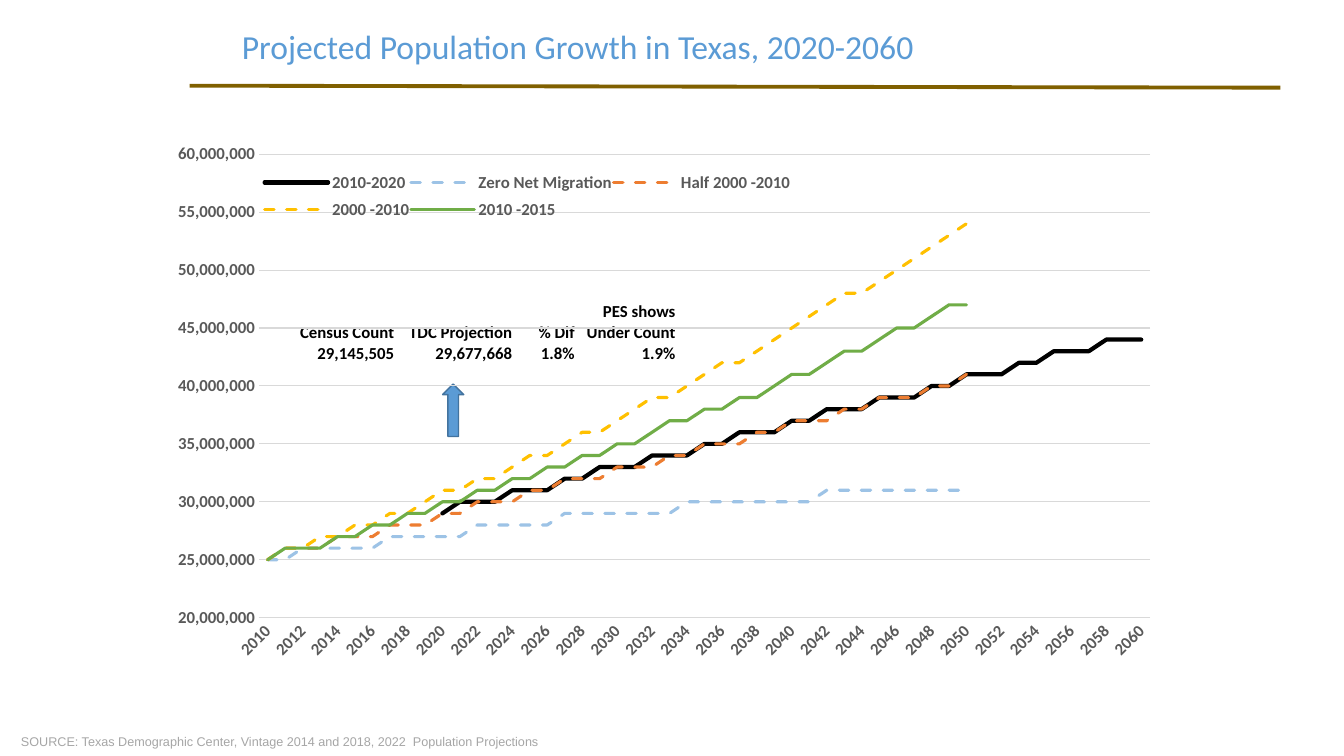
from dataclasses import dataclass
from math import prod

from lxml import etree
from pptx import Presentation
from pptx.chart.data import CategoryChartData
from pptx.dml.color import RGBColor
from pptx.enum.chart import XL_CHART_TYPE, XL_LEGEND_POSITION, XL_TICK_MARK
from pptx.enum.dml import MSO_LINE
from pptx.enum.shapes import MSO_CONNECTOR, MSO_SHAPE
from pptx.enum.text import MSO_ANCHOR, PP_ALIGN
from pptx.oxml import parse_xml
from pptx.oxml.ns import nsdecls, qn
from pptx.util import Inches, Pt

LINE = XL_CHART_TYPE.LINE
BOTTOM = XL_LEGEND_POSITION.BOTTOM
NO_TICK = XL_TICK_MARK.NONE
DASH = MSO_LINE.DASH
STRAIGHT = MSO_CONNECTOR.STRAIGHT
ARROW = MSO_SHAPE.UP_ARROW
LOW = MSO_ANCHOR.BOTTOM
RIGHT = PP_ALIGN.RIGHT


@dataclass(frozen=True)
class Theme:
    face: str = "Calibri"
    note_face: str = "Arial"
    title: int = 24
    body: int = 12
    note: int = 9
    blue: str = "5B9BD5"
    edge: str = "43739E"
    rule: str = "806000"
    pale: str = "A6A6A6"
    label: str = "595959"
    grid: str = "D9D9D9"
    ink: str = "000000"


@dataclass(frozen=True)
class Trend:
    name: str
    color: str
    start: int
    marks: tuple[float, ...]  # millions of people, one per decade
    width: float = 2.25
    dashed: bool = False


THEME = Theme()
YEARS = range(2010, 2061)
TRENDS = (
    Trend("2010-2020", "000000", 2020, (29.15, 32.95, 36.75, 40.6, 44.4), 3),
    Trend("Zero Net Migration", "9DC3E6", 2010, (25.15, 27.2, 29, 30.3, 31.2), dashed=True),
    Trend("Half 2000 -2010", "ED7D31", 2010, (25.15, 28.85, 32.7, 36.6, 40.6), dashed=True),
    Trend("2000 -2010", "FFC000", 2010, (25.15, 30.6, 37.2, 44.9, 54.4), dashed=True),
    Trend("2010 -2015", "70AD47", 2010, (25.15, 29.65, 34.85, 40.7, 47.4)),
)
COUNTS = (
    ("Census Count", "TDC Projection", "% Dif", "PES shows\vUnder Count"),
    ("29,145,505", "29,677,668", "1.8%", "1.9%"),
)


def rgb(code: str) -> RGBColor:
    return RGBColor.from_string(code)


def style(font, size: int, color: str, bold: bool = False, face: str = THEME.face) -> None:
    font.size, font.bold, font.name = Pt(size), bold, face
    font.color.rgb = rgb(color)


def stroke(line, color: str, width: float) -> None:
    line.color.rgb = rgb(color)
    line.width = Pt(width)


def people(trend: Trend, year: int) -> int | None:
    """Fit a smooth curve through the decade marks, to the nearest million."""
    t = (year - trend.start) / 10
    spots = range(len(trend.marks))
    if not 0 <= t <= spots[-1]:
        return None
    total = sum(m * prod((t - j) / (i - j) for j in spots if j != i)
                for i, m in enumerate(trend.marks))
    return round(total) * 1_000_000


def add_text(slide, box: tuple[float, ...], text: str):
    frame = slide.shapes.add_textbox(*map(Inches, box)).text_frame
    frame.word_wrap = True
    frame.text = text
    return frame.paragraphs[0]


def add_rule(slide) -> None:
    ends = map(Inches, (1.88, 0.85, 12.7, 0.87))
    rule = slide.shapes.add_connector(STRAIGHT, *ends)
    stroke(rule.line, THEME.rule, 2.75)
    etree.SubElement(rule.element.spPr, qn("a:effectLst"))


def add_counts(slide) -> None:
    box = map(Inches, (2.75, 2.94, 3.95, 0.67))
    frame = slide.shapes.add_table(2, 4, *box)
    table = frame.table
    table.first_row = table.horz_banding = False
    for col, width in zip(table.columns, (1.17, 1.17, 0.62, 1)):
        col.width = Inches(width)
    for row, height, texts in zip(table.rows, (0.46, 0.2), COUNTS):
        row.height = Inches(height)
        for cell, text in zip(row.cells, texts):
            cell.fill.background()
            cell.vertical_anchor = LOW
            cell.margin_left = cell.margin_right = cell.margin_top = Inches(0.01)
            cell.margin_bottom = 0
            cell.text_frame.text = text
            para = cell.text_frame.paragraphs[0]
            para.alignment = RIGHT
            for run in para.runs:
                style(run.font, THEME.body, THEME.ink, True)
    for props in frame.element.xpath(".//a:tcPr"):
        for spot, side in enumerate("LRTB"):
            props.insert(spot, parse_xml(
                f'<a:ln{side} {nsdecls("a")} w="12700"><a:solidFill>'
                f'<a:srgbClr val="FFFFFF"/></a:solidFill></a:ln{side}>'))


def add_arrow(slide) -> None:
    box = map(Inches, (4.39, 3.81, 0.21, 0.52))
    arrow = slide.shapes.add_shape(ARROW, *box)
    arrow.shadow.inherit = False
    arrow.fill.solid()
    arrow.fill.fore_color.rgb = rgb(THEME.blue)
    stroke(arrow.line, THEME.edge, 1)


def layout(box: tuple[float, ...], inner: bool = False):
    """Place a chart part by fractions of the chart's width and height."""
    target = '<c:layoutTarget val="inner"/>' if inner else ""
    modes = "".join(f'<c:{k}Mode val="edge"/>' for k in "xy")
    sizes = "".join(f'<c:{k} val="{v}"/>' for k, v in zip("xywh", box))
    return parse_xml(f'<c:layout {nsdecls("c")}><c:manualLayout>{target}{modes}{sizes}'
                     '</c:manualLayout></c:layout>')


def set_axes(chart) -> None:
    years, count = chart.category_axis, chart.value_axis
    for axis in (years, count):
        axis.major_tick_mark = axis.minor_tick_mark = NO_TICK
        style(axis.tick_labels.font, THEME.body, THEME.label, True)
    stroke(years.format.line, THEME.grid, 0.75)
    count.format.line.fill.background()
    count.minimum_scale, count.maximum_scale = 20_000_000, 60_000_000
    count.major_unit = 5_000_000
    count.tick_labels.number_format = "#,##0"
    count.tick_labels.number_format_is_linked = False
    stroke(count.major_gridlines.format.line, THEME.grid, 0.75)
    chart.element.xpath(".//c:catAx/c:txPr/a:bodyPr")[0].set("rot", "-2700000")
    skip = parse_xml(f'<c:tickLblSkip {nsdecls("c")} val="2"/>')
    chart.element.xpath(".//c:catAx/c:noMultiLvlLbl")[0].addprevious(skip)


def set_legend(chart) -> None:
    chart.has_legend = True
    legend = chart.legend
    legend.position = BOTTOM
    legend.include_in_layout = False
    style(legend.font, THEME.body, THEME.label, True)
    for old in chart.element.xpath(".//c:legend/c:layout"):
        old.getparent().remove(old)
    chart.element.xpath(".//c:legend/c:legendPos")[0].addnext(layout((0.09, 0.1, 0.52, 0.1)))


def add_chart(slide) -> None:
    data = CategoryChartData(number_format="#,##0")
    data.categories = [str(year) for year in YEARS]
    for trend in TRENDS:
        data.add_series(trend.name, [people(trend, year) for year in YEARS])
    box = map(Inches, (1.7, 1.03, 10.09, 6.1))
    chart = slide.shapes.add_chart(LINE, *box, data).chart
    chart.has_title = False
    style(chart.font, THEME.body, THEME.ink, True)
    chart.plots[0].vary_by_categories = False
    for series, trend in zip(chart.plots[0].series, TRENDS):
        series.smooth = False
        stroke(series.format.line, trend.color, trend.width)
        if trend.dashed:
            series.format.line.dash_style = DASH
    for line in chart.element.xpath(".//c:ser/c:spPr/a:ln"):
        line.set("cap", "rnd")
    set_axes(chart)
    set_legend(chart)
    area = chart.element.xpath(".//c:plotArea")[0]
    for old in area.xpath("./c:layout"):
        area.remove(old)
    area.insert(0, layout((0.086, 0.082, 0.876, 0.754), True))
    clear = f'<c:spPr {nsdecls("c", "a")}><a:noFill/><a:ln><a:noFill/></a:ln></c:spPr>'
    chart.element.xpath("./c:chart")[0].addnext(parse_xml(clear))


def main() -> None:
    deck = Presentation()
    deck.slide_width, deck.slide_height = Inches(13.33), Inches(7.5)
    slide = deck.slides.add_slide(deck.slide_layouts[6])
    add_rule(slide)
    source = add_text(slide, (0.11, 7.23, 10.91, 0.25), "SOURCE: Texas Demographic Center, "
                      "Vintage 2014 and 2018, 2022  Population Projections")
    source.space_after = Pt(2)
    style(source.runs[0].font, THEME.note, THEME.pale, face=THEME.note_face)
    title = add_text(slide, (2.3, 0.36, 7.25, 0.38),
                     "Projected Population Growth in Texas, 2020-2060")
    title.line_spacing = Pt(18)
    style(title.runs[0].font, THEME.title, THEME.blue)
    add_counts(slide)
    add_arrow(slide)
    add_chart(slide)
    deck.save("out.pptx")


if __name__ == "__main__":
    main()
